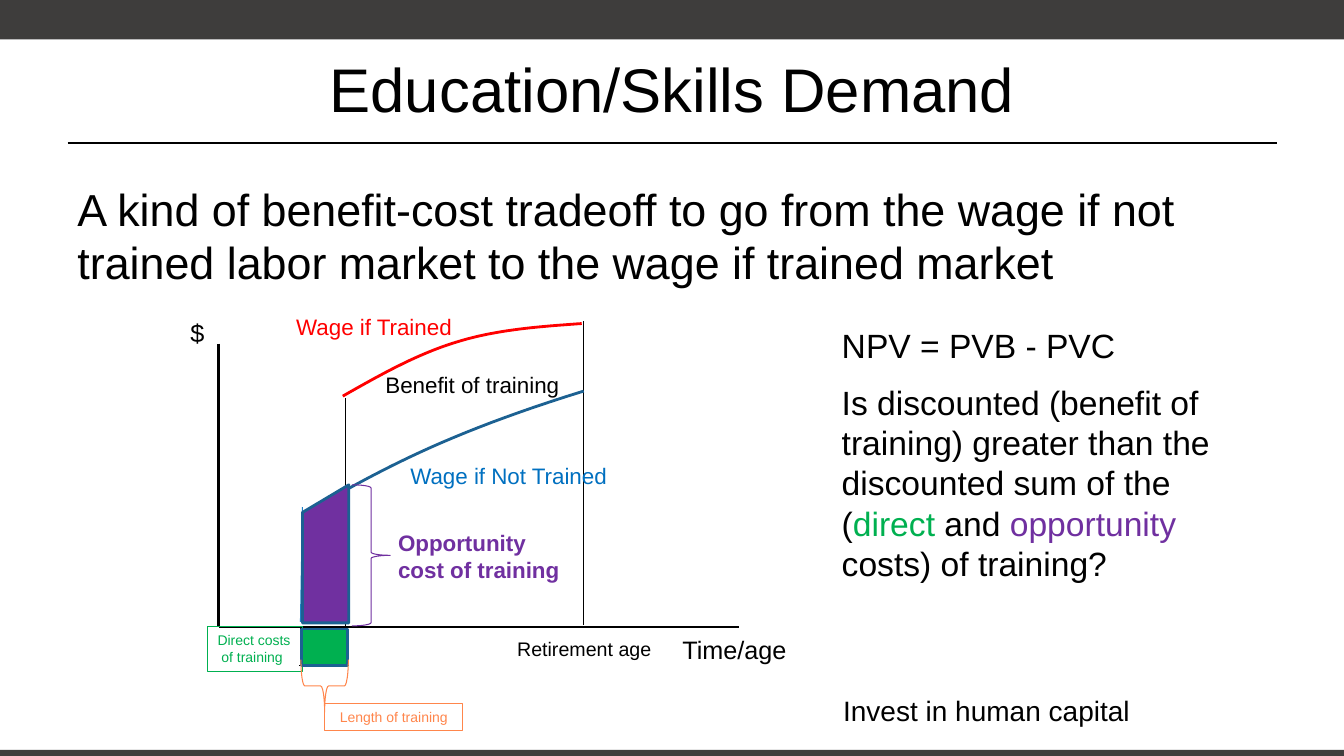
from lxml.etree import SubElement
from pptx import Presentation
from pptx.dml.color import RGBColor
from pptx.enum.shapes import MSO_CONNECTOR, MSO_SHAPE
from pptx.enum.text import MSO_ANCHOR, PP_ALIGN
from pptx.oxml.ns import qn
from pptx.util import Pt

PX = 9144  # 100 px to the inch
FONT = "Arial"
COLORS = {"black": "000000", "bar": "3E3D3C", "red": "FF0000", "navy": "1C6192",
          "steel": "2181C6", "blue": "0070C0", "green": "00B050",
          "purple": "7030A0", "orange": "FF864C"}
ALIGN = {"l": PP_ALIGN.LEFT, "c": PP_ALIGN.CENTER}

TITLE = "Education/Skills Demand"
BODY = ("A kind of benefit-cost tradeoff to go from the wage if not trained "
        "labor market to the wage if trained market")
NPV = [
    [("NPV = PVB - PVC", "black")],
    [("Is discounted (benefit of training) greater than the discounted sum of the (", "black"),
     ("direct", "green"), (" and ", "black"), ("opportunity ", "purple"),
     ("costs) of training?", "black")],
]

# name: box, size, colour, alignment, wrap, bold
LABELS = {
    "Time/age": ((667, 624, 123, 36), 18, "black", "l", False, False),
    "$": ((179, 310, 30, 36), 18, "black", "l", False, False),
    "Wage if Trained": ((263, 306, 216, 37), 16, "red", "c", True, False),
    "Wage if Not Trained": ((388, 454, 233, 37), 16, "blue", "c", True, False),
    "Retirement age": ((500, 630, 159, 28), 14, "black", "c", True, False),
    "Opportunity cost of training": ((385, 520, 184, 64), 16, "purple", "l", True, True),
    "Benefit of training": ((371, 363, 195, 37), 16, "black", "c", False, False),
    "Invest in human capital": ((825, 683, 307, 44), 20, "black", "c", False, False),
}

# from x, y to x, y, colour, width
TITLE_RULE = (67, 142, 1267, 142, "black", 1.25)
CHART_LINES = [
    (217, 622, 733, 622, "black", 2),
    (217, 341, 217, 621, "black", 2),
    (298, 617, 300, 503, "steel", 0.75),
    (298, 622, 298, 657, "black", 0.75),
    (343, 660, 343, 619, "black", 0.75),
    (297, 660, 343, 660, "black", 0.75),
    (343, 395, 343, 622, "black", 0.75),
    (579, 620, 579, 318, "black", 0.75),
]

# start point, then Bezier segments of two handles and an end
WAGE_NOT_TRAINED = [(313, 503), (377, 467), (440, 431), (579, 388)]
WAGE_TRAINED = [(340, 393), (377, 372), (414, 351), (454, 339),
                (493, 327), (535, 324), (577, 321)]

# shape, box, rotation, fill, line, width, text, alignment
BARS = [
    (MSO_SHAPE.RECTANGLE, (0, 0, 1333, 39), 0, "bar", None, 0, "", "c"),
    (MSO_SHAPE.RECTANGLE, (0, 744, 1333, 10), 0, "bar", None, 0, "", "c"),
]
COSTS = [
    (MSO_SHAPE.RECTANGLE, (206, 622, 94, 44), 0, None, "green", 0.75,
     "Direct costs\n of training", "l"),
    (MSO_SHAPE.RECTANGLE, (299, 624, 46, 36), 0, "green", "navy", 2, "", "c"),
    (MSO_SHAPE.FLOWCHART_MANUAL_INPUT, (300, 481, 46, 137), 0, "purple", "navy", 2, "", "c"),
    (MSO_SHAPE.RIGHT_BRACE, (349, 481, 38, 140), 0, None, "purple", 0.75, "", "c"),
    (MSO_SHAPE.LEFT_BRACE, (296, 657, 52, 47), 270, None, "orange", 0.75, "", "c"),
    (MSO_SHAPE.RECTANGLE, (322, 698, 137, 27), 0, None, "orange", 0.75,
     "Length of training", "c"),
]

prs = Presentation()
prs.slide_width, prs.slide_height = 1333 * PX, 750 * PX
s = prs.slides.add_slide(prs.slide_layouts[5])


def emu(values):
    return [v * PX for v in values]


def rgb(name):
    return RGBColor.from_string(COLORS[name])


def format_text(tf, size, color, align, bold=False):
    for p in tf.paragraphs:
        p.alignment = ALIGN[align]
        for r in p.runs:
            f = r.font
            f.name, f.size, f.bold = FONT, Pt(size), bold
            f.color.rgb = rgb(color)


def set_line(line, color, width):
    line.color.rgb = rgb(color)
    line.width = Pt(width)


def add_text(text, box, size, color="black", align="l", wrap=True, bold=False):
    tf = s.shapes.add_textbox(*emu(box)).text_frame
    tf.word_wrap = wrap
    tf.text = text
    format_text(tf, size, color, align, bold)
    return tf


def add_line(x1, y1, x2, y2, color, width):
    c = s.shapes.add_connector(MSO_CONNECTOR.STRAIGHT, *emu((x1, y1, x2, y2)))
    set_line(c.line, color, width)
    SubElement(c._element.spPr, qn("a:effectLst"))


def add_shape(kind, box, rotation, fill, line, width, text, align):
    sp = s.shapes.add_shape(kind, *emu(box))
    sp.shadow.inherit = False
    sp.rotation = rotation
    if fill:
        sp.fill.solid()
        sp.fill.fore_color.rgb = rgb(fill)
    else:
        sp.fill.background()
    if line:
        set_line(sp.line, line, width)
    else:
        sp.line.fill.background()
    if text:
        tf = sp.text_frame
        tf.text = text
        tf.vertical_anchor = MSO_ANCHOR.TOP
        format_text(tf, 10, line, align)


def add_curve(points, color, steps=24):
    """Draw joined cubic Bezier segments as one open outline."""
    path = []
    for i in range(0, len(points) - 1, 3):
        for k in range(1, steps + 1):
            t = k / steps
            weights = ((1 - t) ** 3, 3 * t * (1 - t) ** 2, 3 * t * t * (1 - t), t ** 3)
            path.append([sum(w * pt[axis] for w, pt in zip(weights, points[i:i + 4])) * PX
                         for axis in (0, 1)])
    fb = s.shapes.build_freeform(*emu(points[0]))
    fb.add_line_segments(path, close=False)
    sp = fb.convert_to_shape()
    sp.shadow.inherit = False
    sp.fill.background()
    set_line(sp.line, color, 2)


title = s.shapes.title
title.left, title.top, title.width, title.height = emu((67, 25, 1200, 125))
title.text_frame.text = TITLE
title.text_frame.vertical_anchor = MSO_ANCHOR.MIDDLE
format_text(title.text_frame, 44, "black", "c")

for bar in BARS:
    add_shape(*bar)
add_line(*TITLE_RULE)
add_text(BODY, (67, 175, 1200, 98), 32).paragraphs[0].space_before = Pt(6)

for line in CHART_LINES:
    add_line(*line)
add_curve(WAGE_NOT_TRAINED, "navy")
add_curve(WAGE_TRAINED, "red")
for cost in COSTS:
    add_shape(*cost)
for text, (box, size, color, align, wrap, bold) in LABELS.items():
    tf = add_text(text, box, size, color, align, wrap, bold)
    if text == "Retirement age":
        tf.vertical_anchor = MSO_ANCHOR.MIDDLE

tf = add_text("", (825, 317, 442, 269), 24)
for i, runs in enumerate(NPV):
    p = tf.add_paragraph() if i else tf.paragraphs[0]
    p.space_before = Pt(12 * i)
    for text, color in runs:
        r = p.add_run()
        r.text = text
        r.font.name, r.font.size = FONT, Pt(24)
        r.font.color.rgb = rgb(color)

prs.save("out.pptx")
